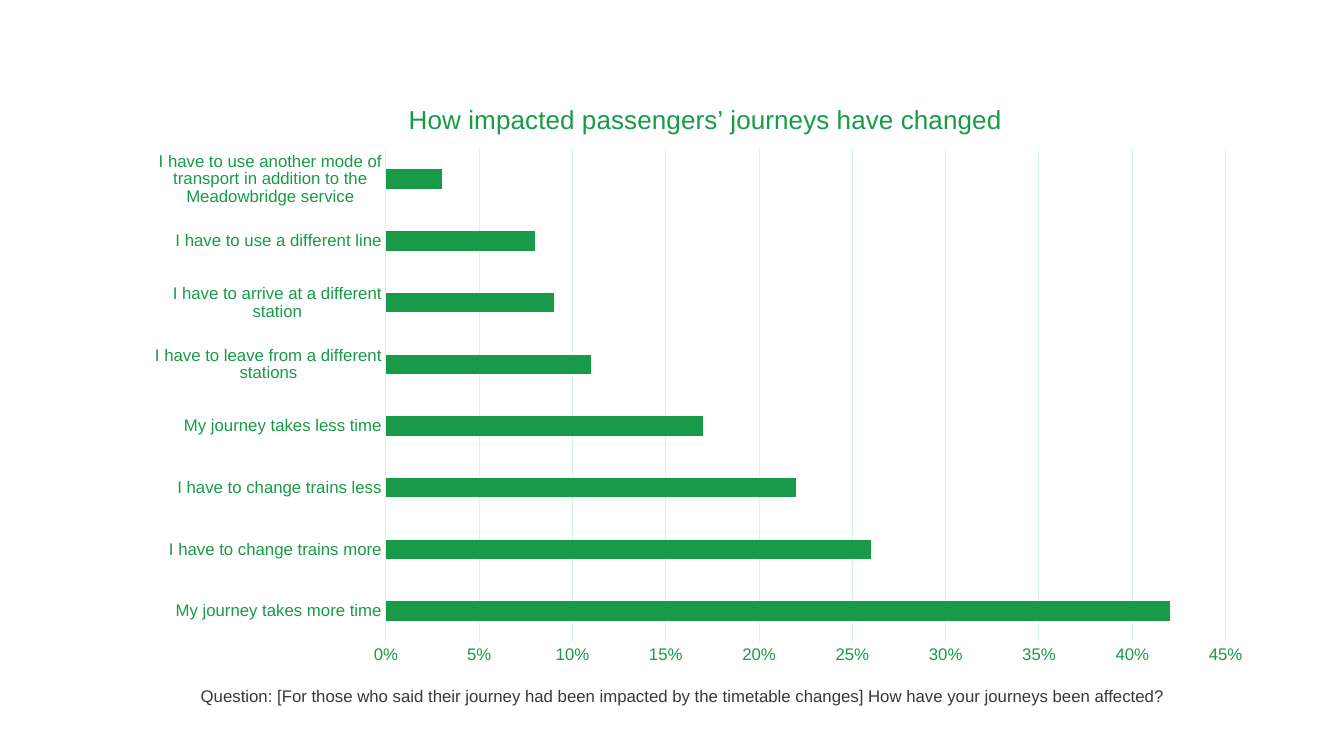
from lxml import etree
from pptx import Presentation
from pptx import util as u
from pptx.chart.data import CategoryChartData
from pptx.dml.color import RGBColor
from pptx.enum import chart as ch, text
from pptx.oxml.ns import qn

GREEN, PALE, GREY = "189A48", "D4F8E1", "36393C"
ANSWERS = {
    "My journey takes more time": 0.42,
    "I have to change trains more": 0.26,
    "I have to change trains less": 0.22,
    "My journey takes less time": 0.17,
    "I have to leave from a different stations": 0.11,
    "I have to arrive at a different station": 0.09,
    "I have to use a different line": 0.08,
    "I have to use another mode of transport in addition to the Meadowbridge service": 0.03,
}


def rgb(value):
    """Return the colour for a hex string."""
    return RGBColor.from_string(value)


def set_font(font, size, color):
    """Apply the slide's typeface with a size and colour."""
    for name, value in {"name": "Arial", "size": u.Pt(size), "bold": False}.items():
        setattr(font, name, value)
    font.color.rgb = rgb(color)


def set_line(line):
    """Make a pale hairline."""
    line.color.rgb = rgb(PALE)
    line.width = u.Pt(0.75)


def set_layout(parent, before, **values):
    """Place a chart part by fractions of the chart area."""
    for old in parent.findall(qn("c:layout")):
        parent.remove(old)
    layout = etree.Element(qn("c:layout"))
    manual = etree.SubElement(layout, qn("c:manualLayout"))
    for name, value in values.items():
        etree.SubElement(manual, qn("c:" + name)).set("val", str(value))
    parent.insert(before, layout)


def add_journey_chart(s, left, top, width, height):
    """Draw the titled bar chart of answers in the given box."""
    data = CategoryChartData(number_format="0%")
    data.categories = list(ANSWERS)
    data.add_series("Series 1", list(ANSWERS.values()))
    box = [u.Inches(v) for v in (left, top, width, height)]
    chart = s.shapes.add_chart(ch.XL_CHART_TYPE.BAR_CLUSTERED, *box, data).chart
    set_font(chart.font, 10, GREEN)
    chart.has_legend = False

    title = chart.chart_title
    p = title.text_frame.paragraphs[0]
    r = p.add_run()
    r.text = "How impacted passengers’ journeys have changed"
    set_font(r.font, 18.6, GREEN)
    title.include_in_layout = False
    set_layout(title._element, 1, xMode="edge", yMode="edge", x=0.24, y=0.03)

    plot = chart.plots[0]
    plot.gap_width = 219
    plot.vary_by_categories = False
    fill = plot.series[0].format.fill
    fill.solid()
    fill.fore_color.rgb = rgb(GREEN)
    set_layout(chart._chartSpace.chart.plotArea, 0, layoutTarget="inner",
               xMode="edge", yMode="edge", x=0.224, y=0.115, w=0.741, h=0.826)

    cat, val = chart.category_axis, chart.value_axis
    for axis in (cat, val):
        axis.major_tick_mark = axis.minor_tick_mark = ch.XL_TICK_MARK.NONE
        set_font(axis.tick_labels.font, 12, GREEN)
    set_line(cat.format.line)
    val.format.line.fill.background()
    set_line(val.major_gridlines.format.line)
    for name, value in {"minimum_scale": 0, "maximum_scale": 0.45, "major_unit": 0.05}.items():
        setattr(val, name, value)
    val.tick_labels.number_format = "0%"
    val.tick_labels.number_format_is_linked = False


def add_question(s, left, top, width, height):
    """Write the survey question in the given box."""
    box = [u.Inches(v) for v in (left, top, width, height)]
    tf = s.shapes.add_textbox(*box).text_frame
    tf.word_wrap = True
    for side in ("left", "top", "right", "bottom"):
        setattr(tf, "margin_" + side, 0)
    p = tf.paragraphs[0]
    p.alignment = text.PP_ALIGN.CENTER
    r = p.add_run()
    r.text = ("Question: [For those who said their journey had been impacted by "
              "the timetable changes] How have your journeys been affected?")
    set_font(r.font, 12, GREY)


def main():
    """Build and save the slide."""
    prs = Presentation()
    prs.slide_width, prs.slide_height = u.Inches(13.33), u.Inches(7.5)
    s = prs.slides.add_slide(prs.slide_layouts[6])
    add_journey_chart(s, 1.31, 0.79, 11.24, 5.93)
    add_question(s, 0.91, 6.8, 11.73, 0.49)
    prs.save("out.pptx")


if __name__ == "__main__":
    main()
